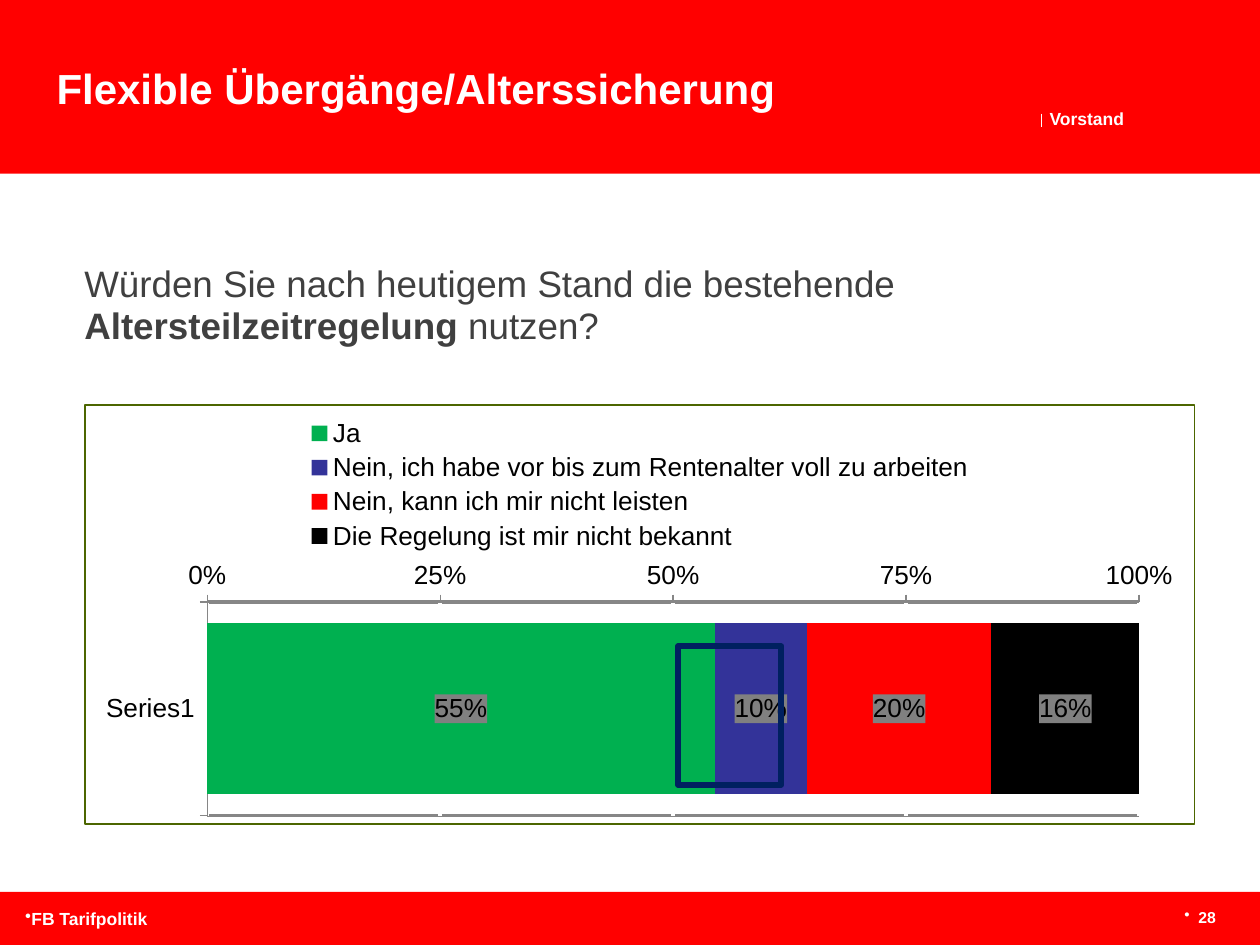
import dataclasses

import lxml.etree
import pptx
import pptx.chart.data
import pptx.dml.color
import pptx.enum.chart
import pptx.enum.shapes
import pptx.enum.text
import pptx.oxml
import pptx.oxml.ns
import pptx.util

Cm = pptx.util.Cm
Pt = pptx.util.Pt
RGB = pptx.dml.color.RGBColor.from_string
qn = pptx.oxml.ns.qn


@dataclasses.dataclass(frozen=True)
class Theme:
    font: str = "Arial"
    red: str = "FF0000"
    white: str = "FFFFFF"
    black: str = "000000"
    question: str = "404040"
    green: str = "00B050"
    blue: str = "333399"
    navy: str = "002060"
    border: str = "4C6600"
    axis: str = "868686"
    label: str = "808080"
    title_size: int = 24
    question_size: int = 21
    chart_size: int = 15
    small_size: int = 10
    number_size: int = 9


theme = Theme()


def add_text(box, runs, size, color, spacing=None, wrap=False, inset=0, bullet_indent=None):
    shape = slide.shapes.add_textbox(*[Cm(length) for length in box])
    frame = shape.text_frame
    frame.word_wrap = wrap
    frame.margin_left = frame.margin_right = Cm(inset)
    frame.margin_top = frame.margin_bottom = Cm(inset / 2)
    paragraph = frame.paragraphs[0]
    if spacing:
        paragraph.line_spacing = Pt(spacing)
    if bullet_indent is not None:
        properties = paragraph._p.get_or_add_pPr()
        properties.set("marL", str(Cm(bullet_indent)))
        properties.set("indent", str(-Cm(bullet_indent)))
        lxml.etree.SubElement(properties, qn("a:buChar")).set("char", "•")
    for text, bold in runs:
        run = paragraph.add_run()
        run.text = text
        run.font.name = theme.font
        run.font.size = Pt(size)
        run.font.bold = bold
        run.font.color.rgb = RGB(color)
    return paragraph


def chart_xml(tag, content):
    namespaces = pptx.oxml.ns.nsdecls("c", "a")
    return pptx.oxml.parse_xml(f"<c:{tag} {namespaces}>{content}</c:{tag}>")


presentation = pptx.Presentation()
presentation.slide_width = Cm(25.4)
presentation.slide_height = Cm(19.05)
slide = presentation.slides.add_slide(presentation.slide_layouts[6])

for top, height in ((17.98, 1.07), (0, 3.5)):
    band = slide.shapes.add_shape(
        pptx.enum.shapes.MSO_SHAPE.RECTANGLE, 0, Cm(top), presentation.slide_width, Cm(height))
    band.shadow.inherit = False
    band.fill.solid()
    band.fill.fore_color.rgb = RGB(theme.red)
    band.line.fill.background()

add_text((21.16, 2.22, 1.55, 0.38), [("Vorstand", True)], theme.small_size, theme.white, 11)
divider = slide.shapes.add_connector(
    pptx.enum.shapes.MSO_CONNECTOR.STRAIGHT, Cm(21), Cm(2.29), Cm(21), Cm(2.57))
divider.line.color.rgb = RGB(theme.white)
divider.line.width = Pt(0.8)
lxml.etree.SubElement(divider._element.spPr, qn("a:effectLst"))

number = add_text((23.85, 18.26, 0.66, 0.43), [("28", True)],
                  theme.number_size, theme.white, 12, bullet_indent=0.28)
number.alignment = pptx.enum.text.PP_ALIGN.RIGHT
add_text((0.51, 18.31, 4, 0.43), [("FB Tarifpolitik", True)],
         theme.small_size, theme.white, 12, wrap=True, bullet_indent=0)

answers = (
    ("Ja", 0.55, theme.green),
    ("Nein, ich habe vor bis zum Rentenalter voll zu arbeiten", 0.10, theme.blue),
    ("Nein, kann ich mir nicht leisten", 0.20, theme.red),
    ("Die Regelung ist mir nicht bekannt", 0.16, theme.black),
)
chart_data = pptx.chart.data.CategoryChartData(number_format="0%")
chart_data.categories = ["Series1"]
for name, share, color in answers:
    chart_data.add_series(name, [share])
chart = slide.shapes.add_chart(
    pptx.enum.chart.XL_CHART_TYPE.BAR_STACKED_100,
    Cm(1.7), Cm(8.15), Cm(22.4), Cm(8.48), chart_data).chart
chart.has_title = False
chart.font.name = theme.font
chart.font.size = Pt(theme.chart_size)
chart.font.color.rgb = RGB(theme.black)
chart._chartSpace.find(qn("c:txPr")).addprevious(chart_xml(
    "spPr",
    f'<a:solidFill><a:srgbClr val="{theme.white}"/></a:solidFill>'
    f'<a:ln w="{Pt(1)}"><a:solidFill><a:srgbClr val="{theme.border}"/></a:solidFill></a:ln>'))

chart.has_legend = True
chart.legend.position = pptx.enum.chart.XL_LEGEND_POSITION.TOP
chart.legend.include_in_layout = False
plot_area = chart._chartSpace.chart.plotArea
for old_layout in plot_area.findall(qn("c:layout")):
    plot_area.remove(old_layout)
layouts = (
    ('<c:layoutTarget val="inner"/>', (0.11, 0.475, 0.84, 0.505)),
    ("", (0.2, 0.02, 0.6, 0.34)),
)
plot_layout, legend_layout = [
    chart_xml("layout", "<c:manualLayout>" + target
              + '<c:xMode val="edge"/><c:yMode val="edge"/>'
              + "".join(f'<c:{key} val="{value:.2f}"/>' for key, value in zip("xywh", values))
              + "</c:manualLayout>")
    for target, values in layouts
]
plot_area.insert(0, plot_layout)
chart.legend._element.find(qn("c:legendPos")).addnext(legend_layout)

category_axis = chart.category_axis
category_axis.reverse_order = True
category_axis.tick_label_position = pptx.enum.chart.XL_TICK_LABEL_POSITION.LOW
value_axis = chart.value_axis
value_axis.minimum_scale = 0
value_axis.maximum_scale = 1
value_axis.major_unit = 0.25
value_axis.tick_labels.number_format = "0%"
value_axis.tick_labels.number_format_is_linked = False
for axis, grid_color in ((category_axis, theme.axis), (value_axis, theme.white)):
    axis.major_tick_mark = pptx.enum.chart.XL_TICK_MARK.OUTSIDE
    axis.has_major_gridlines = True
    axis.major_gridlines.format.line.color.rgb = RGB(grid_color)
    axis.major_gridlines.format.line.width = Pt(2)
    axis.format.line.color.rgb = RGB(theme.axis)
    axis.format.line.width = Pt(0.75)

plot = chart.plots[0]
plot.gap_width = 25
plot.overlap = 100
plot.vary_by_categories = False
for series, (name, share, color) in zip(plot.series, answers):
    series.format.fill.solid()
    series.format.fill.fore_color.rgb = RGB(color)
    labels = series.data_labels
    labels.show_value = True
    labels.number_format = "0%"
    labels.number_format_is_linked = False
    labels.font.name = theme.font
    labels.font.size = Pt(theme.chart_size)
    labels.font.color.rgb = RGB(theme.black)
    labels._element.find(qn("c:txPr")).addprevious(chart_xml(
        "spPr", f'<a:solidFill><a:srgbClr val="{theme.label}"/></a:solidFill>'))

question = add_text(
    (1.7, 5.29, 21.39, 1.7),
    [("Würden Sie nach heutigem Stand die bestehende ", False),
     ("Altersteilzeitregelung", True), (" nutzen?", False)],
    theme.question_size, theme.question, 24, wrap=True)
question.space_after = Pt(6)
add_text((0.89, 1.14, 15.14, 1.27), [("Flexible Übergänge/Alterssicherung", True)],
         theme.title_size, theme.white, inset=0.25)

highlight = slide.shapes.add_shape(
    pptx.enum.shapes.MSO_SHAPE.RECTANGLE, Cm(13.67), Cm(13.03), Cm(2.08), Cm(2.79))
highlight.shadow.inherit = False
highlight.fill.background()
highlight.line.color.rgb = RGB(theme.navy)
highlight.line.width = Pt(3.5)

presentation.save("out.pptx")
